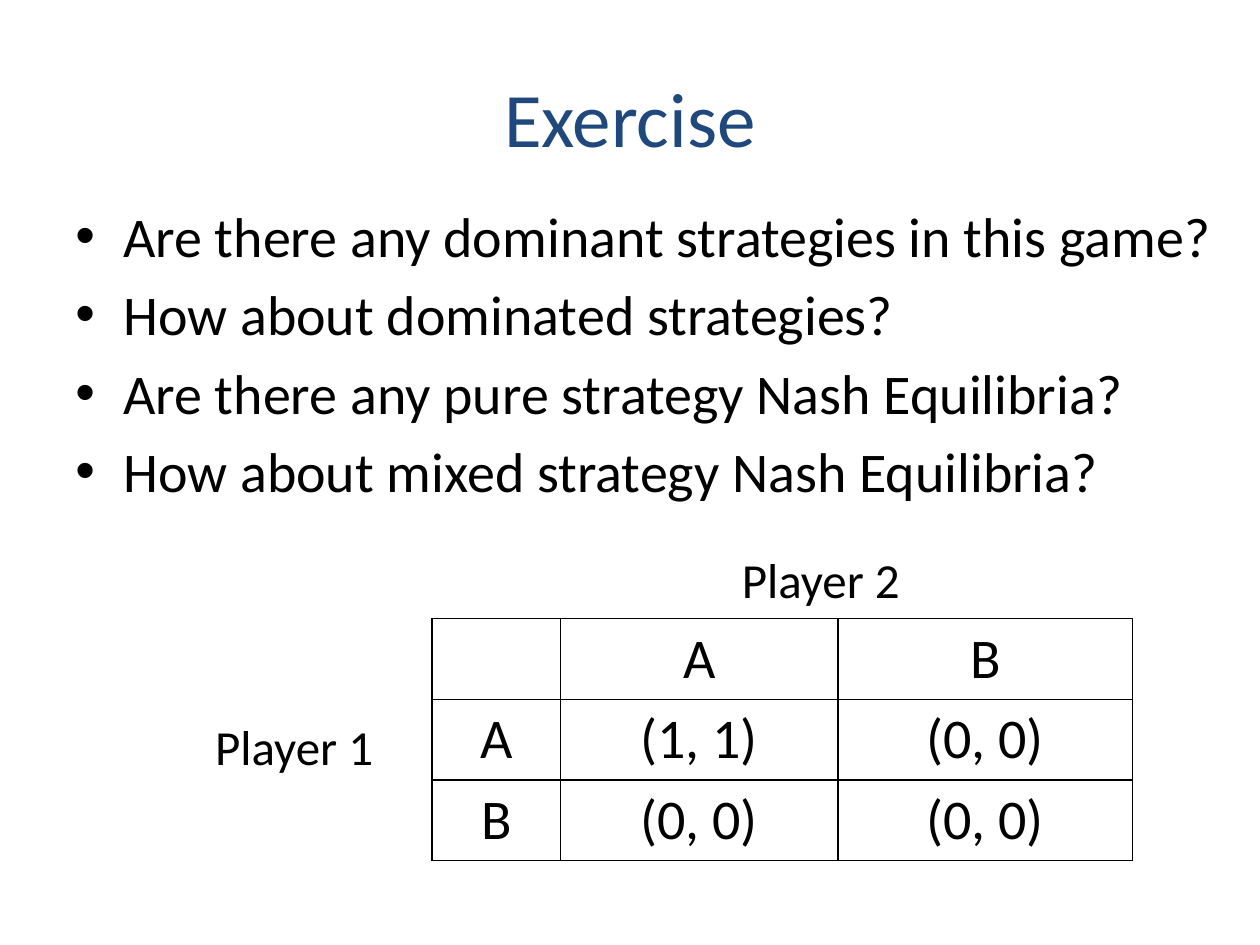
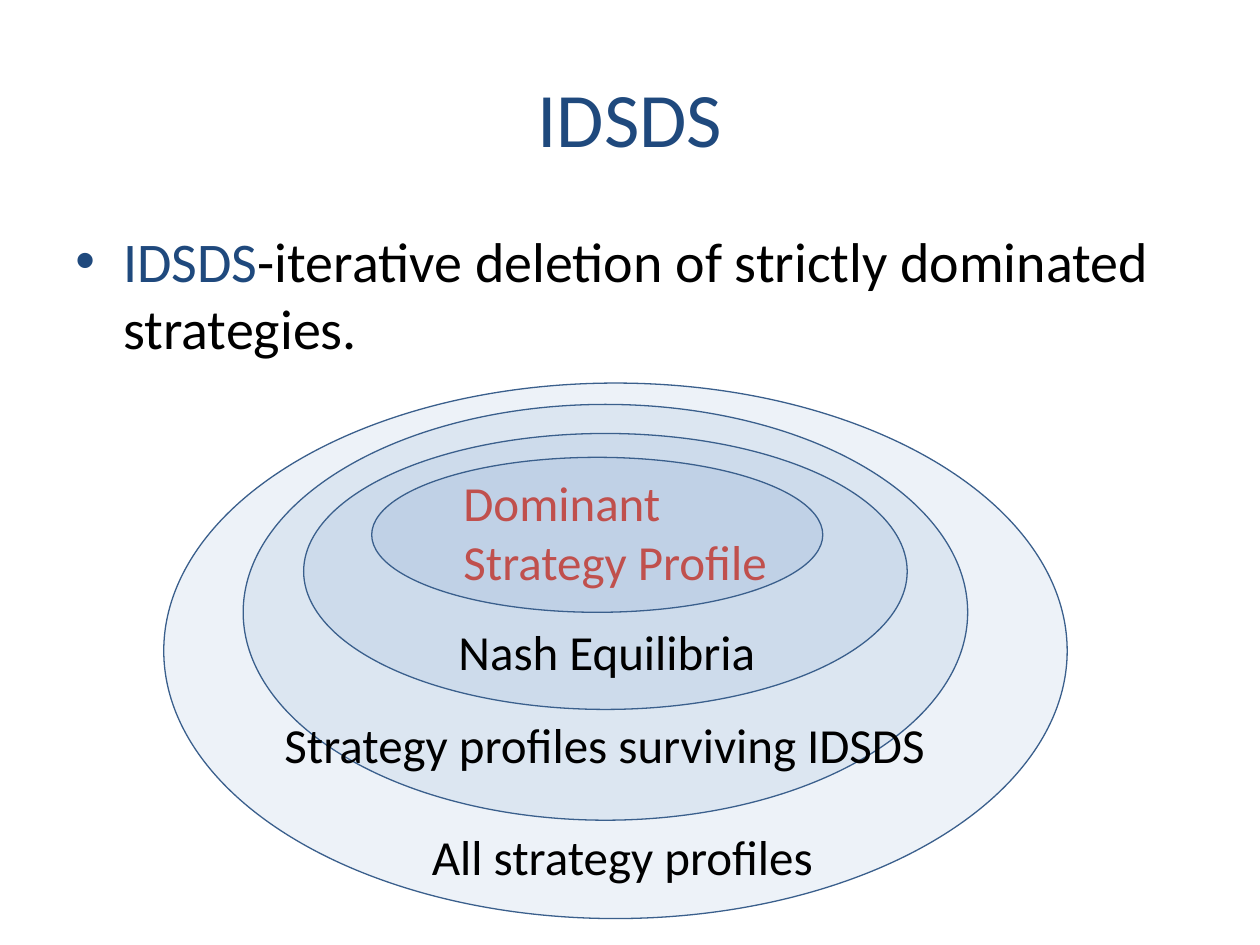
from lxml import etree
from pptx import Presentation
from pptx.dml.color import RGBColor
from pptx.enum.shapes import MSO_SHAPE as Shape
from pptx.enum.text import MSO_ANCHOR as Anchor, PP_ALIGN as Align
from pptx.oxml.ns import qn
from pptx.util import Inches, Pt

FONT = "Calibri"
BLACK, NAVY, BLUE, OUTLINE, RED = "000000", "1F497D", "4F81BD", "3A5F8C", "C0504D"
TITLE_SIZE, BODY_SIZE, LABEL_SIZE = 44, 32, 28
RING_ALPHA = 10


def rgb(value):
    return RGBColor.from_string(value)


def style(run, size, color=BLACK):
    run.font.name = FONT
    run.font.size = Pt(size)
    run.font.color.rgb = rgb(color)


def add_text_frame(slide, left, top, width, height):
    box = slide.shapes.add_textbox(Inches(left), Inches(top), Inches(width), Inches(height))
    box.text_frame.word_wrap = True
    return box.text_frame


def add_title(slide, title):
    frame = add_text_frame(slide, 0.5, 0.3, 9, 1.25)
    frame.vertical_anchor = Anchor.MIDDLE
    frame.text = title
    heading = frame.paragraphs[0]
    heading.alignment = Align.CENTER
    style(heading.runs[0], TITLE_SIZE, NAVY)


def add_label(slide, text, left, top, width, height=0.57, color=BLACK):
    frame = add_text_frame(slide, left, top, width, height)
    frame.text = text
    style(frame.paragraphs[0].runs[0], LABEL_SIZE, color)


def add_bullets(slide, bullets, top, width, height):
    """Each bullet is a list of (text, colour) pieces."""
    frame = add_text_frame(slide, 0.5, top, width, height)
    for number, pieces in enumerate(bullets):
        paragraph = frame.add_paragraph() if number else frame.paragraphs[0]
        paragraph.space_before = Pt(0.2 * BODY_SIZE)
        properties = paragraph._p.get_or_add_pPr()
        properties.set("marL", str(Inches(0.38)))
        properties.set("indent", str(-Inches(0.38)))
        etree.SubElement(properties, qn("a:buFont"), typeface="Arial")
        etree.SubElement(properties, qn("a:buChar"), char="•")
        for text, color in pieces:
            run = paragraph.add_run()
            run.text = text
            style(run, BODY_SIZE, color)


def add_borders(cell):
    properties = cell._tc.get_or_add_tcPr()
    for side in ("lnL", "lnR", "lnT", "lnB"):
        border = etree.SubElement(properties, qn(f"a:{side}"), w=str(Pt(1)))
        fill = etree.SubElement(border, qn("a:solidFill"))
        etree.SubElement(fill, qn("a:srgbClr"), val=BLACK)


def add_payoff_table(slide, payoffs, left, top, column_widths, row_height):
    table = slide.shapes.add_table(
        len(payoffs), len(column_widths), Inches(left), Inches(top),
        Inches(sum(column_widths)), Inches(row_height * len(payoffs))).table
    table.first_row = table.horz_banding = False
    for column, width in zip(table.columns, column_widths):
        column.width = Inches(width)
    for row, values in zip(table.rows, payoffs):
        row.height = Inches(row_height)
        for cell, value in zip(row.cells, values):
            add_borders(cell)
            cell.fill.background()
            cell.text = value
            paragraph = cell.text_frame.paragraphs[0]
            paragraph.alignment = Align.CENTER
            for run in paragraph.runs:
                style(run, BODY_SIZE)


def add_ring(slide, left, top, width, height):
    """Translucent ellipse, so that nested rings grow darker inwards."""
    ring = slide.shapes.add_shape(
        Shape.OVAL, Inches(left), Inches(top), Inches(width), Inches(height))
    ring.shadow.inherit = False
    ring.fill.solid()
    ring.fill.fore_color.rgb = rgb(BLUE)
    tint = ring._element.spPr.find(qn("a:solidFill")).find(qn("a:srgbClr"))
    etree.SubElement(tint, qn("a:alpha"), val=str(RING_ALPHA * 1000))
    ring.line.color.rgb = rgb(OUTLINE)
    ring.line.width = Pt(0.75)


def build_exercise(slide):
    add_title(slide, "Exercise")
    questions = [
        "Are there any dominant strategies in this game?",
        "How about dominated strategies?",
        "Are there any pure strategy Nash Equilibria?",
        "How about mixed strategy Nash Equilibria?",
    ]
    add_bullets(slide, [[(question, BLACK)] for question in questions], 1.55, 9.22, 2.94)
    payoffs = [
        ["", "A", "B"],
        ["A", "(1, 1)", "(0, 0)"],
        ["B", "(0, 0)", "(0, 0)"],
    ]
    add_payoff_table(slide, payoffs, 3.43, 4.91, [1.02, 2.2, 2.34], 0.64)
    add_label(slide, "Player 1", 1.61, 5.64, 1.57)
    add_label(slide, "Player 2", 5.79, 4.31, 1.57)


def build_idsds(slide):
    add_title(slide, "IDSDS")
    definition = [("IDSDS", NAVY),
                  ("-iterative deletion of strictly dominated strategies.", BLACK)]
    add_bullets(slide, [definition], 1.75, 9, 4.95)
    nested_sets = [
        ((1.3, 3.04, 7.17, 4.25), "All strategy profiles", (3.33, 6.51, 3.33)),
        ((1.93, 3.21, 5.75, 3.3), "Strategy profiles surviving IDSDS", (2.16, 5.62, 5.37)),
        ((2.41, 3.44, 4.79, 2.19), "Nash Equilibria", (3.54, 4.88, 2.61)),
        ((2.95, 3.63, 3.58, 1.23), "Dominant Strategy Profile", (3.58, 3.7, 2.63, 1.04, RED)),
    ]
    for ring, name, label in nested_sets:
        add_ring(slide, *ring)
        add_label(slide, name, *label)


def main():
    deck = Presentation()
    deck.slide_width, deck.slide_height = Inches(10), Inches(7.5)
    blank = deck.slide_layouts[6]
    for build in (build_exercise, build_idsds):
        build(deck.slides.add_slide(blank))
    deck.save("out.pptx")


if __name__ == "__main__":
    main()
